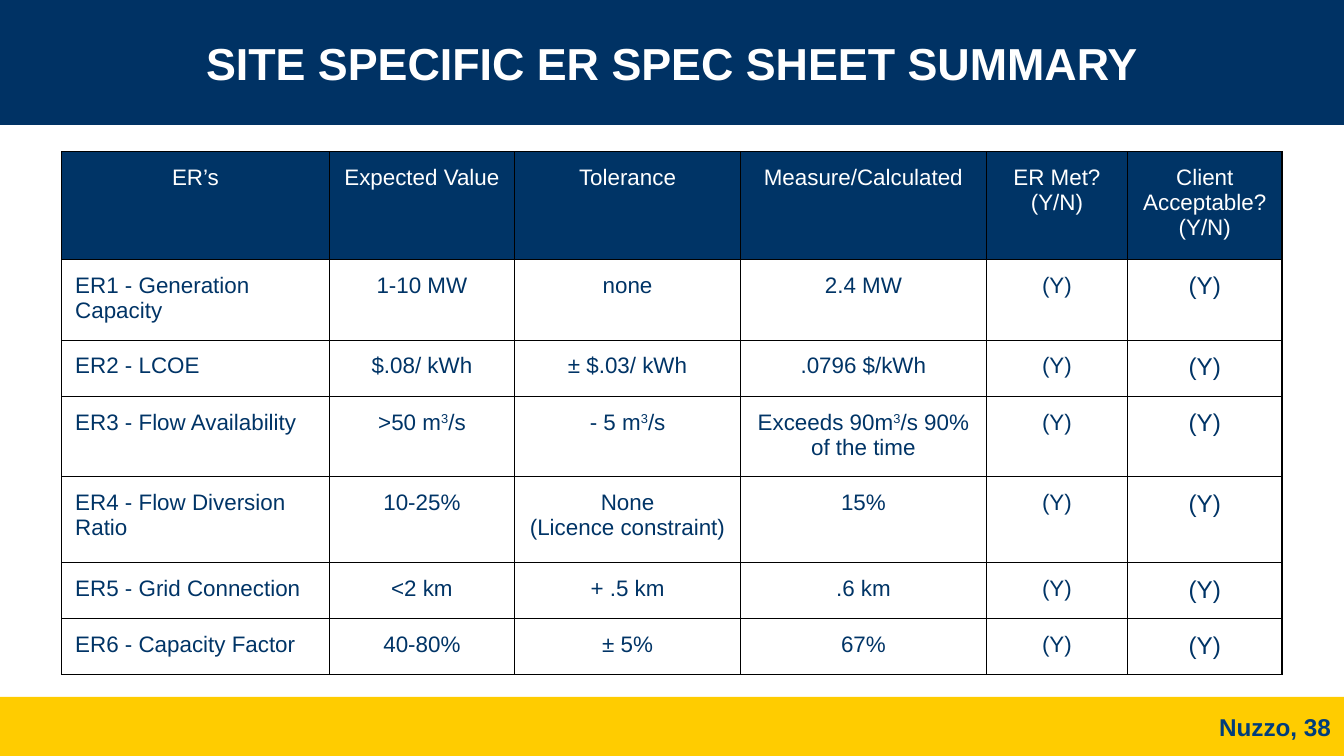
from lxml.etree import SubElement
from pptx import Presentation
from pptx.dml.color import RGBColor
from pptx.enum.shapes import MSO_SHAPE as Shape
from pptx.enum.text import MSO_ANCHOR as Anchor, PP_ALIGN as Align
from pptx.oxml.ns import qn
from pptx.util import Inches, Pt

COLORS = {
    "navy": "003264",
    "table_navy": "003466",
    "footer_blue": "003D7C",
    "gold": "FFCC00",
    "white": "FFFFFF",
    "black": "000000",
}
WIDTH = 10
HEIGHT = WIDTH * 9 / 16
HEADER_HEIGHT, FOOTER_HEIGHT = 0.93, 0.44
COLUMN_WIDTHS = [1.99, 1.38, 1.68, 1.83, 1.05, 1.15]
ROW_HEIGHTS = [0.8, 0.6, 0.41, 0.6, 0.64, 0.41, 0.41]
HEADINGS = ["ER’s", "Expected Value", "Tolerance", "Measure/Calculated",
            "ER Met? (Y/N)", "Client Acceptable? (Y/N)"]
REQUIREMENTS = [
    ["ER1 - Generation Capacity", "1-10 MW", "none", "2.4 MW"],
    ["ER2 - LCOE", "$.08/ kWh", "± $.03/ kWh", ".0796 $/kWh"],
    ["ER3 - Flow Availability", ">50 m^3^/s", "- 5 m^3^/s",
     "Exceeds 90m^3^/s 90% of the time"],
    ["ER4 - Flow Diversion Ratio", "10-25%", "None\n(Licence constraint)", "15%"],
    ["ER5 - Grid Connection", "<2 km", "+ .5 km", ".6 km"],
    ["ER6 - Capacity Factor", "40-80%", "± 5%", "67%"],
]


def rgb(name):
    return RGBColor.from_string(COLORS[name])


def write_text(frame, text, size=12, color="table_navy", bold=False, align=Align.CENTER):
    frame.word_wrap = True
    for index, line in enumerate(text.split("\n")):
        paragraph = frame.paragraphs[0] if index == 0 else frame.add_paragraph()
        paragraph.alignment = align
        for position, part in enumerate(line.split("^")):
            run = paragraph.add_run()
            run.text = part
            run.font.name = "Arial"
            run.font.size = Pt(size)
            run.font.bold = bold
            run.font.color.rgb = rgb(color)
            if position % 2:
                run.font._element.set("baseline", "30000")


def add_band(slide, left, top, width, height, color):
    band = slide.shapes.add_shape(
        Shape.RECTANGLE, Inches(left), Inches(top), Inches(width), Inches(height))
    band.shadow.inherit = False
    band.fill.solid()
    band.fill.fore_color.rgb = rgb(color)
    band.line.fill.background()


def add_label(slide, left, top, width, height, text, **text_format):
    label = slide.shapes.add_textbox(
        Inches(left), Inches(top), Inches(width), Inches(height))
    label.text_frame.vertical_anchor = Anchor.MIDDLE
    write_text(label.text_frame, text, bold=True, **text_format)


def add_header(slide, left, top, width, height):
    add_band(slide, left, top, width, height, "navy")
    margin = 0.42
    add_label(slide, left + margin, top, width - 2 * margin, height,
              "SITE SPECIFIC ER SPEC SHEET SUMMARY", size=24, color="white")


def add_footer(slide, left, top, width, height):
    add_band(slide, left, top, width, height, "gold")
    page_width = 1.17
    add_label(slide, left + width - page_width, top, page_width, height,
              "Nuzzo, 38", size=13, color="footer_blue", align=Align.RIGHT)


def add_borders(cell):
    properties = cell._tc.get_or_add_tcPr()
    for side in ("a:lnL", "a:lnR", "a:lnT", "a:lnB"):
        border = SubElement(properties, qn(side), w=str(Pt(0.75)))
        fill = SubElement(border, qn("a:solidFill"))
        SubElement(fill, qn("a:srgbClr"), val=COLORS["black"])


def fill_cell(cell, text, background, **text_format):
    cell.margin_left = cell.margin_right = Inches(0.1)
    cell.margin_top = cell.margin_bottom = Inches(0.1)
    add_borders(cell)
    cell.fill.solid()
    cell.fill.fore_color.rgb = rgb(background)
    write_text(cell.text_frame, text, **text_format)


def add_summary_table(slide, left, top, width, height):
    rows = [HEADINGS] + [values + ["(Y)", "(Y)"] for values in REQUIREMENTS]
    summary = slide.shapes.add_table(
        len(rows), len(HEADINGS),
        Inches(left), Inches(top), Inches(width), Inches(height)).table
    for column, share in zip(summary.columns, COLUMN_WIDTHS):
        column.width = Inches(width * share / sum(COLUMN_WIDTHS))
    for row, share in zip(summary.rows, ROW_HEIGHTS):
        row.height = Inches(height * share / sum(ROW_HEIGHTS))
    last = len(HEADINGS) - 1
    for r, values in enumerate(rows):
        for c, text in enumerate(values):
            cell = summary.cell(r, c)
            if r == 0:
                fill_cell(cell, text, "table_navy", color="white")
            else:
                fill_cell(cell, text, "white",
                          size=13 if c == last else 12,
                          align=Align.LEFT if c == 0 else Align.CENTER)


def main():
    presentation = Presentation()
    presentation.slide_width = Inches(WIDTH)
    presentation.slide_height = Inches(HEIGHT)
    slide = presentation.slides.add_slide(presentation.slide_layouts[6])
    add_header(slide, 0, 0, WIDTH, HEADER_HEIGHT)
    add_footer(slide, 0, HEIGHT - FOOTER_HEIGHT, WIDTH, FOOTER_HEIGHT)
    add_summary_table(slide, 0.46, 1.13, 9.08, 3.86)
    presentation.save("out.pptx")


if __name__ == "__main__":
    main()
